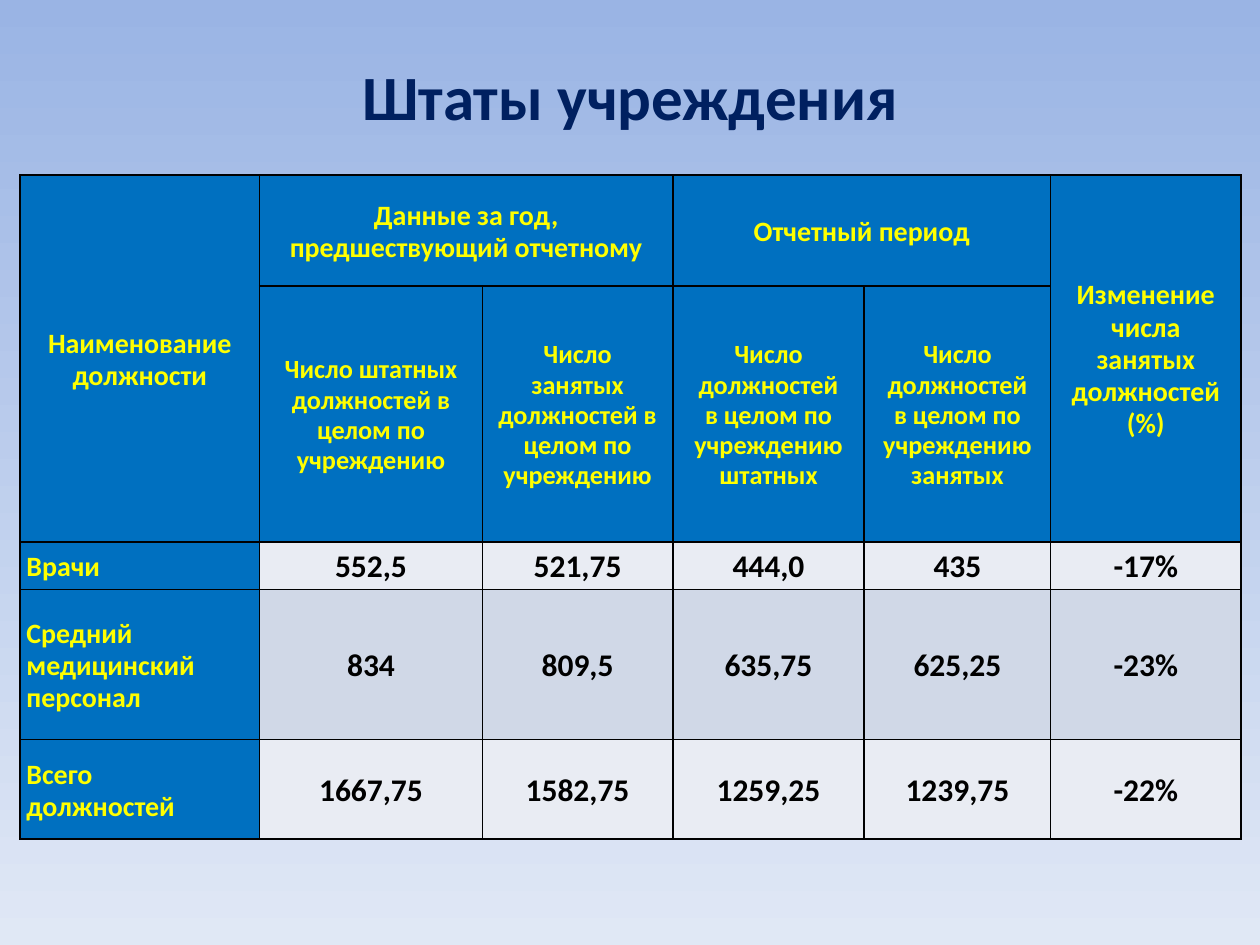
from lxml.etree import SubElement
from pptx import Presentation
from pptx.dml.color import RGBColor as RGB
from pptx.enum.text import MSO_ANCHOR as Anchor, PP_ALIGN as Align
from pptx.oxml.ns import qn
from pptx.util import Inches, Pt

NAVY = RGB(0x00, 0x20, 0x60)
BLUE = RGB(0x00, 0x70, 0xC0)
YELLOW = RGB(0xFF, 0xFF, 0x00)
BLACK = RGB(0x00, 0x00, 0x00)
PALE = RGB(0xE9, 0xEC, 0xF3)
GREY = RGB(0xD0, 0xD8, 0xE7)
SKY = RGB(0x9A, 0xB4, 0xE4)
MIST = RGB(0xE0, 0xE8, 0xF5)

COLS = [1.9, 1.77, 1.51, 1.52, 1.48, 1.51]
ROWS = [0.88, 2.03, 0.38, 1.19, 0.79]

# Row, column, rows spanned, columns spanned, size, text
HEADS = [
    (0, 0, 2, 1, 16, "Наименование\nдолжности"),
    (0, 1, 1, 2, 16, "Данные за год,\nпредшествующий отчетному"),
    (0, 3, 1, 2, 16, "Отчетный период"),
    (0, 5, 2, 1, 16, "Изменение\nчисла\nзанятых\nдолжностей\n(%)"),
    (1, 1, 1, 1, 15, "Число штатных\nдолжностей в\nцелом по\nучреждению"),
    (1, 2, 1, 1, 15, "Число\nзанятых\nдолжностей в целом по\nучреждению"),
    (1, 3, 1, 1, 15, "Число\nдолжностей\nв целом по\nучреждению\nштатных"),
    (1, 4, 1, 1, 15, "Число\nдолжностей\nв целом по\nучреждению\nзанятых"),
]
STAFF = [
    ("Врачи", "552,5", "521,75", "444,0", "435", "-17%"),
    ("Средний\nмедицинский\nперсонал", "834", "809,5", "635,75", "625,25", "-23%"),
    ("Всего\nдолжностей", "1667,75", "1582,75", "1259,25", "1239,75", "-22%"),
]


def apply(item, values):
    for name, value in values.items():
        setattr(item, name, value)


class Deck:
    font = "Calibri"
    pad = {"margin_left": Inches(0.05), "margin_right": Inches(0.05),
           "margin_top": Inches(0.02), "margin_bottom": 0,
           "vertical_anchor": Anchor.MIDDLE}

    def __init__(self):
        self.prs = Presentation()
        apply(self.prs, {"slide_width": Inches(10), "slide_height": Inches(7.5)})
        self.slide = self.prs.slides.add_slide(self.prs.slide_layouts[5])

    def back(self, top, base):
        fill = self.slide.background.fill
        fill.gradient()
        fill.gradient_angle = 270
        for stop, color in zip(fill.gradient_stops, (top, base)):
            stop.color.rgb = color

    def label(self, para, text, size, color, align=Align.CENTER):
        para.text = text
        para.alignment = align
        for run in para.runs:
            apply(run.font, {"name": self.font, "size": Pt(size), "bold": True})
            run.font.color.rgb = color

    def title(self, text):
        box = self.slide.shapes.title
        apply(box, {"left": Inches(0.5), "top": Inches(0.13),
                    "width": Inches(9), "height": Inches(1.25)})
        box.text_frame.vertical_anchor = Anchor.MIDDLE
        self.label(box.text_frame.paragraphs[0], text, 36, NAVY)

    def grid(self, left, top, cols, rows):
        frame = self.slide.shapes.add_table(
            len(rows), len(cols), Inches(left), Inches(top),
            Inches(sum(cols)), Inches(sum(rows)))
        table = frame.table
        for col, width in zip(table.columns, cols):
            col.width = Inches(width)
        for row, height in zip(table.rows, rows):
            row.height = Inches(height)
        for cell in table.iter_cells():
            self.edge(cell)
        return table

    def edge(self, cell):
        props = cell._tc.get_or_add_tcPr()
        for side in ("a:lnL", "a:lnR", "a:lnT", "a:lnB"):
            line = SubElement(props, qn(side), w=str(Pt(1)))
            fill = SubElement(line, qn("a:solidFill"))
            SubElement(fill, qn("a:srgbClr"), val=str(BLACK))

    def cell(self, cell, text, size, color, fill, align=Align.CENTER):
        apply(cell, self.pad)
        cell.fill.solid()
        cell.fill.fore_color.rgb = fill
        para = cell.text_frame.paragraphs[0]
        para.line_spacing = 0.94
        self.label(para, text, size, color, align)


def main():
    deck = Deck()
    deck.back(SKY, MIST)
    deck.title("Штаты учреждения")
    table = deck.grid(0.16, 1.39, COLS, ROWS)

    # Two-level header
    for row, col, down, across, size, text in HEADS:
        cell = table.cell(row, col)
        if down * across > 1:
            cell.merge(table.cell(row + down - 1, col + across - 1))
        deck.cell(cell, text, size, YELLOW, BLUE)

    # Staff rows with alternating fills
    for row, (name, *values) in enumerate(STAFF, 2):
        deck.cell(table.cell(row, 0), name, 16, YELLOW, BLUE, Align.LEFT)
        for col, value in enumerate(values, 1):
            deck.cell(table.cell(row, col), value, 18, BLACK,
                      GREY if row % 2 else PALE)

    deck.prs.save("out.pptx")


if __name__ == "__main__":
    main()
